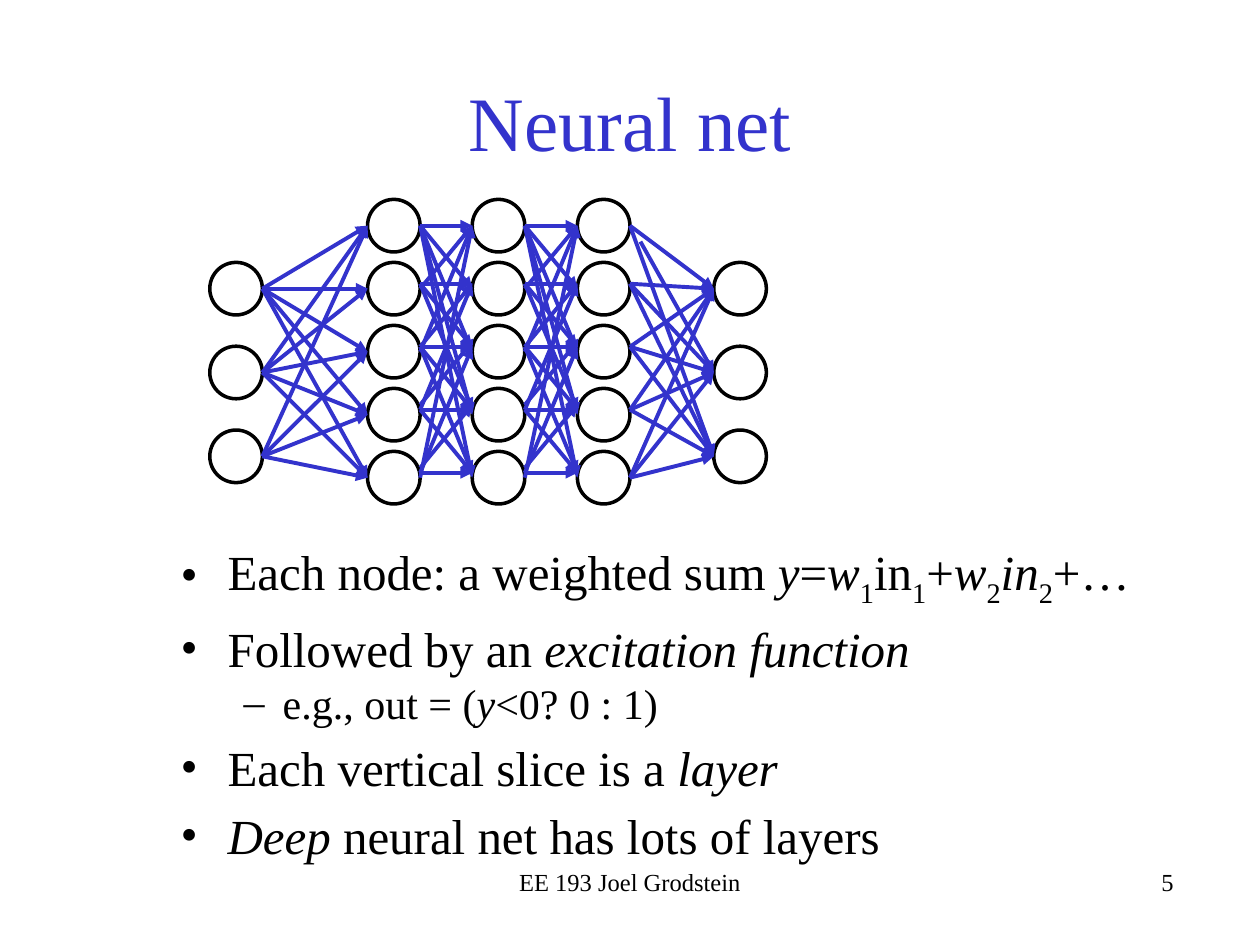
"""Build a slide about the layers of a neural net."""
import itertools

import lxml.etree
import pptx
import pptx.dml.color
import pptx.enum.shapes
import pptx.enum.text
import pptx.oxml.ns
import pptx.util

Cm = pptx.util.Cm
Pt = pptx.util.Pt
ALIGN = pptx.enum.text.PP_ALIGN
BLACK = pptx.dml.color.RGBColor(0x00, 0x00, 0x00)
BLUE = pptx.dml.color.RGBColor(0x33, 0x33, 0xCC)
FONT = "Times New Roman"
NODE = 1.06
OUTER = [1.27 + 1.69 * row for row in range(3)]
INNER = [1.27 * row for row in range(5)]
LAYERS = [(0, OUTER), (3.18, INNER), (5.29, INNER), (7.41, INNER), (10.16, OUTER)]
POINTS = [
    (0, [("Each node: a weighted sum ", ""), ("y", "i"), ("=", ""), ("w", "i"),
         ("1", "s"), ("in", ""), ("1", "s"), ("+", ""), ("w", "i"), ("2", "s"),
         ("in", "i"), ("2", "s"), ("+…", "")]),
    (0, [("Followed by an ", ""), ("excitation function", "i")]),
    (1, [("e.g., out = (", ""), ("y", "i"), ("<0? 0 : 1)", "")]),
    (0, [("Each vertical slice is a ", ""), ("layer", "i")]),
    (0, [("Deep", "i"), (" neural net has lots of layers", "")]),
]
LEVELS = [
    {"mark": "•", "size": 28, "left": 0.95, "hang": 0.95, "gap": 5.5},
    {"mark": "–", "size": 24, "left": 2.06, "hang": 0.79, "gap": 0},
]


def write(para, text, size=14, color=BLACK, style=""):
    """Add a run of text, italic for style i and subscript for style s."""
    run = para.add_run()
    run.text = text
    run.font.name = FONT
    run.font.size = Pt(size)
    run.font.color.rgb = color
    run.font.italic = style == "i"
    if style == "s":
        run.font._element.set("baseline", "-25000")


def tag(parent, name, **attrs):
    """Append a drawing element with the given attributes."""
    lxml.etree.SubElement(parent, pptx.oxml.ns.qn("a:" + name), **attrs)


def frame(slide, left, top, width, height):
    """Add a wrapping text box and return its text frame."""
    box = slide.shapes.add_textbox(Cm(left), Cm(top), Cm(width), Cm(height))
    box.text_frame.word_wrap = True
    return box.text_frame


def head(slide, left, top, width, height):
    """Place and fill the title."""
    title = slide.shapes.title
    title.left, title.top = Cm(left), Cm(top)
    title.width, title.height = Cm(width), Cm(height)
    title.text_frame.vertical_anchor = pptx.enum.text.MSO_ANCHOR.MIDDLE
    para = title.text_frame.paragraphs[0]
    para.alignment = ALIGN.CENTER
    write(para, "Neural net", size=44, color=BLUE)


def node(slide, left, top):
    """Draw one open circle."""
    shape = slide.shapes.add_shape(
        pptx.enum.shapes.MSO_SHAPE.OVAL, Cm(left), Cm(top), Cm(NODE), Cm(NODE))
    shape.shadow.inherit = False
    shape.fill.background()
    shape.line.color.rgb = BLACK
    shape.line.width = Pt(2)


def arrow(slide, start, end):
    """Draw one blue arrow between two points."""
    line = slide.shapes.add_connector(
        pptx.enum.shapes.MSO_CONNECTOR.STRAIGHT, *map(Cm, start + end))
    line.line.color.rgb = BLUE
    line.line.width = Pt(2.25)
    tag(line.line._get_or_add_ln(), "tailEnd", type="triangle")
    tag(line._element.spPr, "effectLst")


def shift(layer, row, goal):
    """Return how far the two ends of a link sit above the node centres."""
    if layer == 0 or 0 in (row, goal) and layer < 3:
        return 0, 0
    if layer == 3:
        return (0.1 if row in (1, 2, 3) else 0), 0
    rise = 0.2 if (row, goal) in ((3, 2), (4, 3)) else 0.1
    return rise, rise


def net(slide, left, top):
    """Draw the layers of nodes and the links between them."""
    for col, rows in LAYERS:
        for row in rows:
            node(slide, left + col, top + row)
    inner = {(1, 4), (3, 0), (4, 1)}
    gaps = [{(2, 1)}, inner, inner, set()]
    for layer, (here, there) in enumerate(itertools.pairwise(LAYERS)):
        (col, rows), (next_col, goals) = here, there
        for row, goal in itertools.product(range(len(rows)), range(len(goals))):
            if (row, goal) in gaps[layer]:
                continue
            rise, drop = shift(layer, row, goal)
            start = (left + col + NODE, top + rows[row] + NODE / 2 - rise)
            end = (left + next_col, top + goals[goal] + NODE / 2 - drop)
            if (layer, row, goal) == (3, 0, 1):
                start = (start[0] + 0.21, start[1] + 0.32)
            arrow(slide, start, end)


def body(slide, left, top, width, height):
    """Write the bullet points."""
    text = frame(slide, left, top, width, height)
    for num, (depth, runs) in enumerate(POINTS):
        para = text.add_paragraph() if num else text.paragraphs[0]
        level = LEVELS[depth]
        para.level = depth
        para.space_before = Pt(level["gap"])
        props = para._p.get_or_add_pPr()
        props.set("marL", str(Cm(level["left"])))
        props.set("indent", str(-Cm(level["hang"])))
        tag(props, "buFont", typeface=FONT)
        tag(props, "buChar", char=level["mark"])
        for words, style in runs:
            write(para, words, size=level["size"], style=style)


def foot(slide, left, top, width, height):
    """Write the course line and the page number."""
    notes = [("EE 193 Joel Grodstein", ALIGN.CENTER, 0), ("5", ALIGN.RIGHT, 7.19)]
    for words, align, step in notes:
        para = frame(slide, left + step, top, width, height).paragraphs[0]
        para.alignment = align
        write(para, words)


def main():
    """Build and save the slide."""
    deck = pptx.Presentation()
    deck.slide_width, deck.slide_height = Cm(25.4), Cm(19.05)
    slide = deck.slides.add_slide(deck.slide_layouts[5])
    head(slide, 1.91, 0.85, 21.59, 3.18)
    body(slide, 3.39, 10.8, 20.53, 5.5)
    foot(slide, 8.68, 17.36, 8.04, 1.27)
    net(slide, 4.23, 4.02)
    deck.save("out.pptx")


if __name__ == "__main__":
    main()
